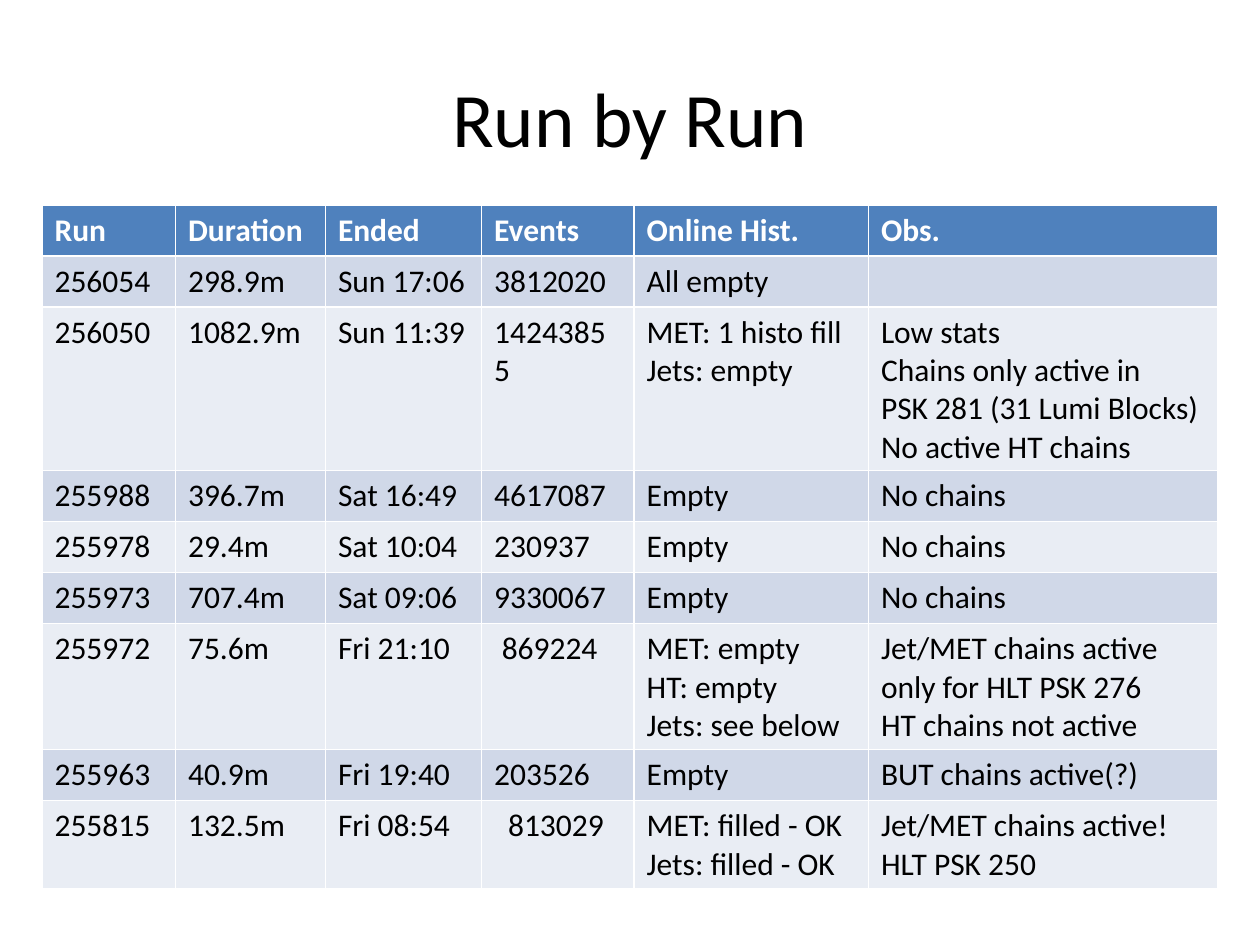
from pptx import Presentation
from pptx.dml.color import RGBColor
from pptx.enum.text import MSO_ANCHOR as Anchor, PP_ALIGN as Align
from pptx.util import Inches, Pt

COLUMN_WIDTHS = [10.6, 11.9, 12.4, 12.1, 18.6, 27.7]  # percent of slide width
ROW_HEIGHT = 5.4  # percent of slide height
HEADERS = ["Run", "Duration", "Ended", "Events", "Online Hist.", "Obs."]
RUNS = [
    ["256054", "298.9m", "Sun 17:06", "3812020", "All empty", ""],
    ["256050", "1082.9m", "Sun 11:39", "14243855", "MET: 1 histo fill\nJets: empty",
     "Low stats\nChains only active in\nPSK 281 (31 Lumi Blocks)\nNo active HT chains"],
    ["255988", "396.7m", "Sat 16:49", "4617087", "Empty", "No chains"],
    ["255978", "29.4m", "Sat 10:04", "230937", "Empty", "No chains"],
    ["255973", "707.4m", "Sat 09:06", "9330067", "Empty", "No chains"],
    ["255972", "75.6m", "Fri 21:10", "869224", "MET: empty\nHT: empty\nJets: see below",
     "Jet/MET chains active only for HLT PSK 276\nHT chains not active"],
    ["255963", "40.9m", "Fri 19:40", "203526", "Empty", "BUT chains active(?)"],
    ["255815", "132.5m", "Fri 08:54", "813029", "MET: filled - OK\nJets: filled - OK",
     "Jet/MET chains active!\nHLT PSK 250"],
]
EVENT_MARGINS = {"869224": 0.16, "813029": 0.21}  # inches, for the indented counts


def color(hex_string):
    return RGBColor.from_string(hex_string)


class RunSlide:
    font = "Calibri"
    text_color, header_text = "000000", "FFFFFF"
    header_fill, band_fills = "4F81BD", ("D0D8E8", "E9EDF4")

    def __init__(self, deck):
        self.deck = deck
        self.slide = deck.slides.add_slide(deck.slide_layouts[6])

    def across(self, percent):
        return round(self.deck.slide_width * percent / 100)

    def down(self, percent):
        return round(self.deck.slide_height * percent / 100)

    def set_text(self, frame, text, size, text_color, bold=False, align=Align.LEFT):
        frame.text = text
        frame.word_wrap = True
        for para in frame.paragraphs:
            para.alignment = align
            para.font.size = Pt(size)
            for span in para.runs:
                span.font.name = self.font
                span.font.size = Pt(size)
                span.font.bold = bold
                span.font.color.rgb = color(text_color)

    def title(self, text, left, top, width, height):
        box = self.slide.shapes.add_textbox(
            self.across(left), self.down(top), self.across(width), self.down(height))
        box.text_frame.vertical_anchor = Anchor.MIDDLE
        self.set_text(box.text_frame, text, 44, self.text_color, align=Align.CENTER)

    def table(self, headers, records, left, top):
        """Add a header row and banded records; rows grow with their text."""
        rows = [headers, *records]
        table = self.slide.shapes.add_table(
            len(rows), len(headers), self.across(left), self.down(top),
            self.across(sum(COLUMN_WIDTHS)), self.down(ROW_HEIGHT * len(rows))).table
        for column, width in zip(table.columns, COLUMN_WIDTHS):
            column.width = self.across(width)
        for index, values in enumerate(rows):
            is_header = index == 0
            fill = self.header_fill if is_header else self.band_fills[(index - 1) % 2]
            text_color = self.header_text if is_header else self.text_color
            for cell, value in zip(table.rows[index].cells, values):
                cell.fill.solid()
                cell.fill.fore_color.rgb = color(fill)
                cell.margin_left = Inches(EVENT_MARGINS.get(value, 0.1))
                self.set_text(cell.text_frame, value, 18, text_color, bold=is_header)


def main():
    deck = Presentation()
    deck.slide_width, deck.slide_height = Inches(10), Inches(7.5)
    page = RunSlide(deck)
    page.title("Run by Run", 5, 4, 90, 16.67)
    page.table(HEADERS, RUNS, 3.33, 21.67)
    deck.save("out.pptx")


if __name__ == "__main__":
    main()
